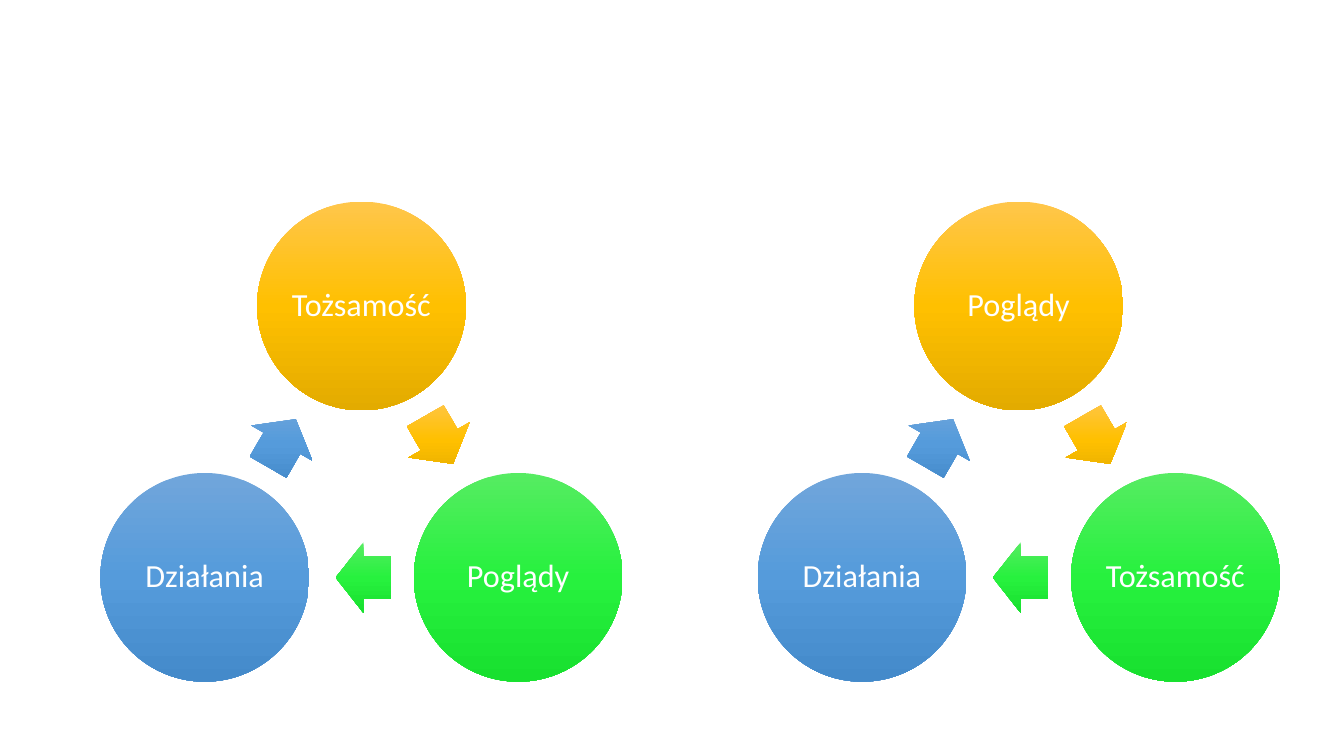
import copy
import math
import pptx
import pptx.dml.color
import pptx.enum.shapes
import pptx.enum.text
import pptx.oxml.ns
import pptx.util

KIND = pptx.enum.shapes.MSO_SHAPE
RGB = pptx.dml.color.RGBColor.from_string
WIDE, HIGH = 13.33, 7.5

THEME = {
    "font": "Calibri",
    "size": 23,
    "text": "FFFFFF",
    "fills": [
        ("FFC64B", "FFC000", "E3AB00"),
        ("56EC62", "27F13E", "18E02F"),
        ("71A6DB", "559BDB", "448ACA"),
    ],
}

RINGS = [
    (0.269 * WIDE, ("Tożsamość", "Poglądy", "Działania")),
    (0.758 * WIDE, ("Poglądy", "Tożsamość", "Działania")),
]
MID = 0.644 * HIGH       # height of each ring's centre
REACH = 0.2393 * HIGH    # ring centre to disc centre
DISC = 0.276 * HIGH
ORBIT = 0.12 * HIGH      # ring centre to arrow centre
LONG, BROAD = 0.55, 0.7


def place(group, kind, hub, reach, angle, size, tones):
    """Add a gradient shape centred at a polar offset from the hub."""
    turn = math.radians(angle)
    left = hub + reach * math.cos(turn) - size[0] / 2
    top = MID + reach * math.sin(turn) - size[1] / 2
    shape = group.shapes.add_shape(
        kind, *(pptx.util.Inches(n) for n in (left, top, *size)))
    shape.shadow.inherit = False
    shape.line.fill.background()
    shape.fill.gradient()
    shape.fill.gradient_angle = 270
    grad = shape._element.spPr.find(pptx.oxml.ns.qn("a:gradFill"))
    grad.set("rotWithShape", "0")
    stops = grad.find(pptx.oxml.ns.qn("a:gsLst"))
    stops.append(copy.deepcopy(stops[0]))
    for step, (stop, tone) in enumerate(zip(shape.fill.gradient_stops, tones)):
        stop.position = step / 2
        stop.color.rgb = RGB(tone)
    return shape


deck = pptx.Presentation()
deck.slide_width = pptx.util.Inches(WIDE)
deck.slide_height = pptx.util.Inches(HIGH)
slide = deck.slides.add_slide(deck.slide_layouts[6])

for hub, words in RINGS:
    ring = slide.shapes.add_group_shape()
    for step, (word, tones) in enumerate(zip(words, THEME["fills"])):
        turn = 120 * step
        disc = place(ring, KIND.OVAL, hub, REACH, turn - 90, (DISC, DISC), tones)
        frame = disc.text_frame
        frame.word_wrap = True
        frame.vertical_anchor = pptx.enum.text.MSO_ANCHOR.MIDDLE
        frame.margin_left = frame.margin_right = pptx.util.Inches(0.03)
        frame.margin_top = frame.margin_bottom = pptx.util.Inches(0.03)
        para = frame.paragraphs[0]
        para.text = word
        para.alignment = pptx.enum.text.PP_ALIGN.CENTER
        para.line_spacing = 0.9
        para.font.name = THEME["font"]
        para.font.size = pptx.util.Pt(THEME["size"])
        para.font.color.rgb = RGB(THEME["text"])

        arrow = place(ring, KIND.RIGHT_ARROW, hub, ORBIT, turn - 31.2,
                      (LONG, BROAD), tones)
        arrow.rotation = turn + 60
        arrow.adjustments[0] = 0.6
        arrow.adjustments[1] = 0.5

deck.save("out.pptx")
